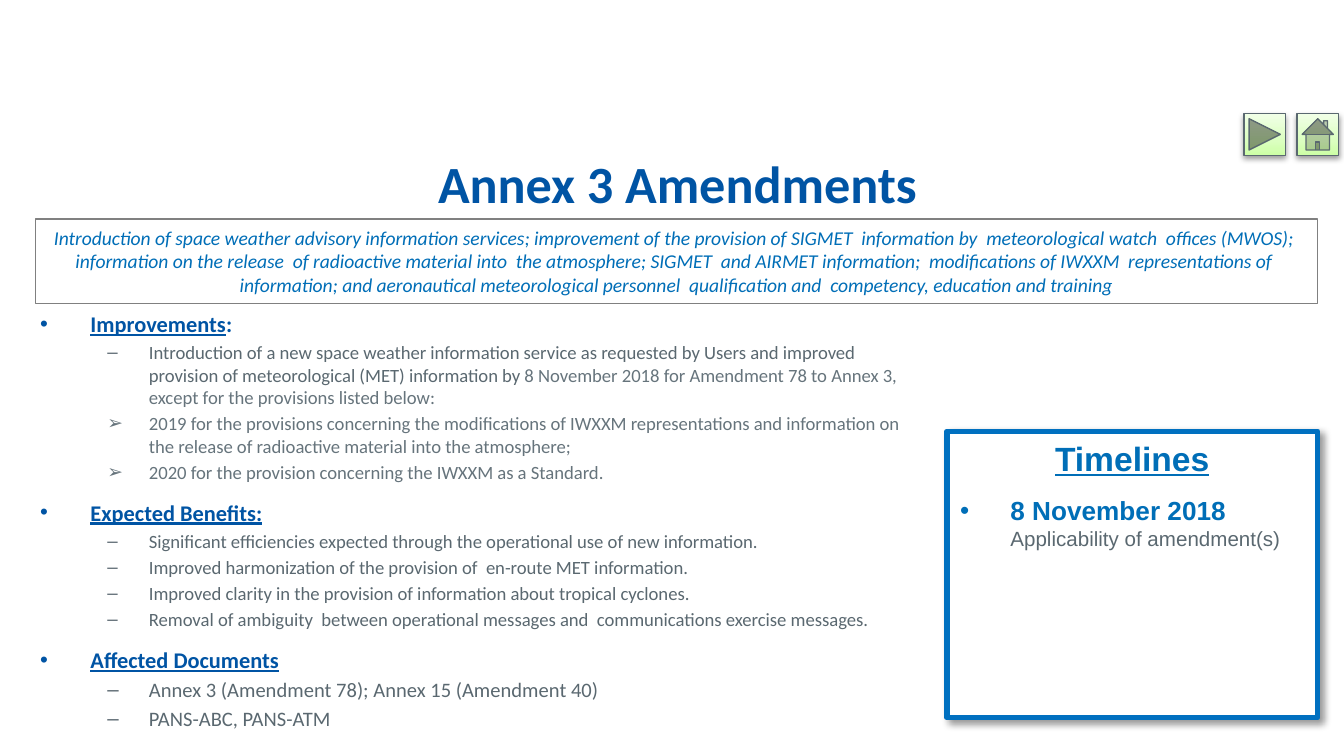
import copy
from dataclasses import dataclass

import lxml.etree
import pptx
import pptx.dml.color
import pptx.enum.shapes
import pptx.enum.text
import pptx.oxml.ns
import pptx.util

RGBColor = pptx.dml.color.RGBColor
Shape = pptx.enum.shapes.MSO_SHAPE
Align = pptx.enum.text.PP_ALIGN
Anchor = pptx.enum.text.MSO_ANCHOR
Pt = pptx.util.Pt
qn = pptx.oxml.ns.qn

PX = 4572  # EMU in one px, 200 px to the inch

NAVY = RGBColor(0x00, 0x54, 0xA4)
BLUE = RGBColor(0x00, 0x6E, 0xB7)
FRAME_BLUE = RGBColor(0x00, 0x70, 0xC0)
SLATE = RGBColor(0x5A, 0x68, 0x70)
LIGHT_SLATE = RGBColor(0x66, 0x74, 0x7C)
GREY = RGBColor(0x80, 0x80, 0x80)
WHITE = RGBColor(0xFF, 0xFF, 0xFF)
BUTTON_STOPS = (
    (0, RGBColor(0xCD, 0xFF, 0xA6)),
    (0.35, RGBColor(0xDB, 0xFF, 0xC0)),
    (1, RGBColor(0xF1, 0xFF, 0xE7)),
)


@dataclass(frozen=True)
class Area:
    left: int
    top: int
    width: int
    height: int

    def emu(self) -> list[int]:
        return [n * PX for n in (self.left, self.top, self.width, self.height)]


@dataclass(frozen=True)
class Style:
    size: float
    color: RGBColor
    font: str = "Calibri"
    bold: bool = False
    italic: bool = False
    underline: bool = False


@dataclass(frozen=True)
class Bullet:
    mark: str
    level: int
    margin: int
    hang: int


@dataclass(frozen=True)
class Para:
    spans: tuple[tuple[str, Style], ...]
    bullet: Bullet | None = None
    after: int = 0


@dataclass(frozen=True)
class Shadow:
    alpha: int
    blur: float
    distance: float
    angle: int


TITLE = Style(28, NAVY, bold=True)
SUMMARY = Style(10.5, BLUE, italic=True)
HEADING = Style(12, NAVY, bold=True, underline=True)
HEADING_PLAIN = Style(12, NAVY, bold=True)
ITEM = Style(10, SLATE)
ITEM_LIGHT = Style(10, LIGHT_SLATE)
DOCUMENT = Style(11, SLATE)
TIMELINES = Style(18, BLUE, "Arial", bold=True, underline=True)
DATE = Style(14, BLUE, "Arial", bold=True)
DATE_NOTE = Style(11, SLATE, "Arial")

DOT = Bullet("•", 0, 75, 75)
DASH = Bullet("–", 1, 162, 62)
ARROW = Bullet("➢", 1, 162, 62)

FRAME_SHADOW = Shadow(40, 4, 3, 45)
BUTTON_SHADOW = Shadow(38, 3.1, 1.6, 90)


def apply_style(font, style: Style) -> None:
    font.name = style.font
    font.size = Pt(style.size)
    font.color.rgb = style.color
    font.bold = style.bold
    font.italic = style.italic
    font.underline = style.underline


def set_bullet(paragraph, bullet: Bullet) -> None:
    paragraph.level = bullet.level
    properties = paragraph._p.get_or_add_pPr()
    properties.set("marL", str(bullet.margin * PX))
    properties.set("indent", str(-bullet.hang * PX))
    lxml.etree.SubElement(properties, qn("a:buFont"), typeface="Arial")
    lxml.etree.SubElement(properties, qn("a:buChar"), char=bullet.mark)


def write(box, paras: list[Para], align=Align.LEFT, anchor=Anchor.TOP) -> None:
    frame = box.text_frame
    frame.word_wrap = True
    frame.vertical_anchor = anchor
    for index, para in enumerate(paras):
        paragraph = frame.add_paragraph() if index else frame.paragraphs[0]
        paragraph.alignment = Align.LEFT if para.bullet else align
        if para.bullet:
            set_bullet(paragraph, para.bullet)
        first_style = para.spans[0][1]
        if index:
            paragraph.space_before = Pt(first_style.size * 0.2)
        paragraph.space_after = Pt(para.after)
        agree = all(style == first_style for _, style in para.spans)
        if agree:
            apply_style(paragraph.font, first_style)
        for text, style in para.spans:
            if text == "\n":
                paragraph.add_line_break()
                continue
            span = paragraph.add_run()
            span.text = text
            if not agree:
                apply_style(span.font, style)


def add_shadow(shape, shadow: Shadow) -> None:
    effects = shape._element.spPr.find(qn("a:effectLst"))
    outer = lxml.etree.SubElement(
        effects, qn("a:outerShdw"), blurRad=str(Pt(shadow.blur)),
        dist=str(Pt(shadow.distance)), dir=str(shadow.angle * 60000), rotWithShape="0")
    color = lxml.etree.SubElement(outer, qn("a:srgbClr"), val="000000")
    lxml.etree.SubElement(color, qn("a:alpha"), val=str(shadow.alpha * 1000))


def add_panel(page, kind, area: Area, line: RGBColor, weight: float,
              shadow: Shadow | None = None):
    shape = page.shapes.add_shape(kind, *area.emu())
    shape.shadow.inherit = False
    shape.fill.solid()
    shape.fill.fore_color.rgb = WHITE
    shape.line.color.rgb = line
    shape.line.width = Pt(weight)
    if shadow:
        add_shadow(shape, shadow)
    return shape


def add_button(page, kind, left: int) -> None:
    button = add_panel(page, kind, Area(left, 169, 62, 62), SLATE, 0.75, BUTTON_SHADOW)
    button.fill.gradient()
    button.fill.gradient_angle = 90
    stop_list = button._element.spPr.find(".//" + qn("a:gsLst"))
    stop_list.insert(1, copy.deepcopy(stop_list[0]))
    for stop, (position, color) in zip(button.fill.gradient_stops, BUTTON_STOPS):
        stop.position = position
        stop.color.rgb = color


def line_of(text: str, style: Style, bullet: Bullet | None = None, after: int = 0) -> Para:
    return Para(((text, style),), bullet, after)


BODY = [
    Para((("Improvements", HEADING), (":", HEADING_PLAIN)), DOT),
    Para((
        ("Introduction of a new space weather information service as requested by Users and "
         "improved provision of meteorological (MET) information by ", ITEM),
        ("8 November 2018 for Amendment 78 to Annex 3, except for the provisions listed below:",
         ITEM_LIGHT)), DASH),
    line_of("2019 for the provisions concerning the modifications of IWXXM representations and "
            "information on the release of radioactive material into the atmosphere;",
            ITEM_LIGHT, ARROW),
    line_of("2020 for the provision concerning the IWXXM as a Standard.", ITEM_LIGHT, ARROW, 6),
    line_of("Expected Benefits:", HEADING, DOT),
    line_of("Significant efficiencies expected through the operational use of new information.",
            ITEM, DASH),
    line_of("Improved harmonization of the provision of  en-route MET information.", ITEM, DASH),
    line_of("Improved clarity in the provision of information about tropical cyclones.",
            ITEM, DASH),
    line_of("Removal of ambiguity  between operational messages and  communications exercise "
            "messages.", ITEM, DASH, 6),
    line_of("Affected Documents", HEADING, DOT),
    line_of("Annex 3 (Amendment 78); Annex 15 (Amendment 40)", DOCUMENT, DASH),
    line_of("PANS-ABC, PANS-ATM", DOCUMENT, DASH),
]
SUMMARY_TEXT = (
    "Introduction of space weather advisory information services; improvement of the provision "
    "of SIGMET  information by  meteorological watch  offices (MWOS);  information on the "
    "release  of radioactive material into  the atmosphere; SIGMET  and AIRMET information;  "
    "modifications of IWXXM  representations of  information; and aeronautical meteorological "
    "personnel  qualification and  competency, education and training")
SCHEDULE = [
    line_of("Timelines", TIMELINES, after=6),
    Para((("8 November 2018", DATE), ("\n", DATE),
          ("Applicability of amendment(s)", DATE_NOTE)), DOT),
]


def main() -> None:
    deck = pptx.Presentation()
    deck.slide_width, deck.slide_height = 2000 * PX, 1125 * PX
    page = deck.slides.add_slide(deck.slide_layouts[6])

    # Title and body
    title = page.shapes.add_textbox(*Area(55, 217, 1906, 110).emu())
    write(title, [line_of("Annex 3 Amendments", TITLE)], Align.CENTER, Anchor.MIDDLE)
    body = page.shapes.add_textbox(*Area(40, 452, 1354, 708).emu())
    write(body, BODY)

    # Timelines and summary panels
    timelines = add_panel(page, Shape.RECTANGLE, Area(1409, 642, 552, 426),
                          FRAME_BLUE, 3, FRAME_SHADOW)
    write(timelines, SCHEDULE, Align.CENTER)
    summary = add_panel(page, Shape.RECTANGLE, Area(53, 326, 1908, 126), GREY, 0.75)
    write(summary, [line_of(SUMMARY_TEXT, SUMMARY)], Align.CENTER)

    # Navigation buttons
    add_button(page, Shape.ACTION_BUTTON_HOME, 1930)
    add_button(page, Shape.ACTION_BUTTON_FORWARD_OR_NEXT, 1851)

    deck.save("out.pptx")


if __name__ == "__main__":
    main()
